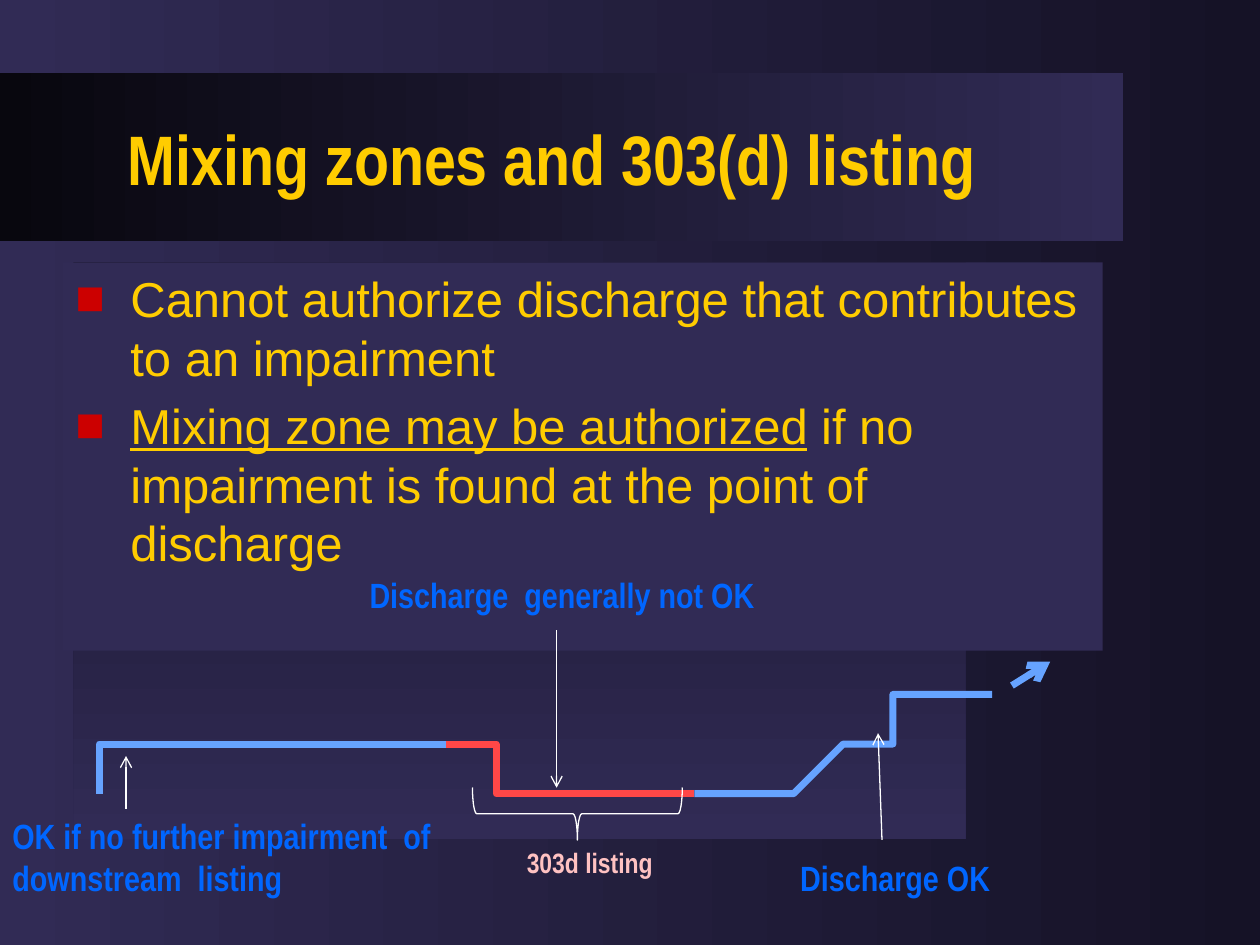
from dataclasses import dataclass

from lxml import etree
from pptx import Presentation
from pptx.dml.color import RGBColor
from pptx.enum.shapes import MSO_CONNECTOR as Conn, MSO_SHAPE as Shape
from pptx.enum.text import MSO_ANCHOR as Anchor
from pptx.oxml.ns import qn
from pptx.util import Cm, Pt

NAVY, DARK, BLACK = "312B55", "151226", "08070E"
GOLD, BLUE, PINK, WHITE = "FFCC00", "0066FF", "FFC2C2", "FFFFFF"
WATER, IMPAIRED, BULLET = "66A3FF", "FF4747", "CC0000"
NARROW = "Arial Narrow"


# All lengths below are in centimetres, line widths and text sizes in points.
@dataclass
class Reach:
    color: str
    points: list[tuple[float, float]]


@dataclass
class Arrow:
    start: tuple[float, float]
    end: tuple[float, float]
    color: str = WHITE
    width: float = 0.75


@dataclass
class Label:
    text: str
    box: tuple[float, float, float, float]
    size: float = 20
    color: str = BLUE
    wrap: bool = False


REACHES = [
    Reach(WATER, [
        (1.57, 15.62), (1.98, 15.44), (2.03, 15.39), (2.13, 15.37), (2.41, 15.21),
        (2.59, 15.19), (2.9, 15.09), (3.05, 15.04), (3.38, 14.96), (3.56, 14.86),
        (3.76, 14.81), (4.11, 14.71), (4.22, 14.66), (4.37, 14.63), (4.78, 14.66),
        (5.66, 14.76), (5.99, 14.81), (6.17, 14.81), (6.48, 14.86), (6.81, 14.88),
        (8.03, 14.91), (8.13, 14.99), (8.31, 15.01), (8.59, 15.01), (9.04, 15.06),
        (9.25, 15.11), (9.45, 15.19)]),
    Reach(IMPAIRED, [
        (9.45, 15.29), (9.68, 15.24), (9.86, 15.29), (9.98, 15.39), (10.16, 15.65),
        (10.52, 15.75), (10.62, 15.77), (11.33, 15.85), (12.14, 15.93), (12.32, 15.95),
        (12.45, 16.03), (12.7, 16.07), (12.98, 16.03), (13.34, 15.93), (13.44, 15.85),
        (13.74, 15.8), (14.12, 15.8)]),
    Reach(WATER, [
        (14, 15.85), (16.05, 15.8), (16.15, 15.77), (16.33, 15.62), (16.59, 15.44),
        (16.71, 15.39), (16.99, 15.14), (17.12, 15.09), (17.35, 14.96), (17.58, 14.88),
        (17.7, 14.78), (17.81, 14.76), (18.03, 14.61), (18.26, 14.46), (18.37, 14.46),
        (18.67, 14.5), (19.43, 14.45), (19.53, 14.4), (19.66, 14.35), (19.86, 14.17),
        (20.17, 14), (20.4, 13.82)]),
]

ARROWS = [
    Arrow((20.4, 13.82), (21.17, 13.34), WATER, 4),
    Arrow((17.78, 16.93), (17.7, 14.78)),
    Arrow((11.22, 12.7), (11.22, 15.88)),
    Arrow((2.54, 16.3), (2.54, 15.24)),
]

LABELS = [
    Label("Discharge OK", (15.88, 17.15, 4.52, 1.11)),
    Label("Discharge  generally not OK", (7.2, 11.43, 8.48, 1.11)),
    Label("OK if no further impairment  of downstream  listing",
          (0, 16.3, 10.16, 1.96), wrap=True),
    Label("303d listing", (10.37, 16.93, 3.08, 0.93), size=16, color=PINK),
]


def rgb(color: str) -> RGBColor:
    return RGBColor.from_string(color)


def set_gradient(fill, first: str, last: str, angle: float = 0) -> None:
    fill.gradient()
    fill.gradient_angle = angle
    for stop, color in zip(fill.gradient_stops, (first, last)):
        stop.color.rgb = rgb(color)


def set_line(shape, color: str, width: float) -> None:
    shape.line.color.rgb = rgb(color)
    shape.line.width = Pt(width)


def add_panel(s, *box: float):
    sp = s.shapes.add_shape(Shape.RECTANGLE, *map(Cm, box))
    sp.shadow.inherit = False
    sp.line.fill.background()
    return sp


def add_text_box(s, box, wrap: bool = True, anchor=Anchor.TOP):
    sp = s.shapes.add_textbox(*map(Cm, box))
    sp.text_frame.word_wrap = wrap
    sp.text_frame.vertical_anchor = anchor
    return sp


def add_run(p, text: str, *, size: float, color: str, font: str = NARROW,
            bold: bool = True, underline: bool = False) -> None:
    r = p.add_run()
    r.text = text
    f = r.font
    f.name, f.size, f.bold, f.underline = font, Pt(size), bold, underline
    f.color.rgb = rgb(color)


def set_bullet(p, char: str, color: str, indent: float) -> None:
    pPr = p._p.get_or_add_pPr()
    pPr.set("marL", str(Cm(indent)))
    pPr.set("indent", str(-Cm(indent)))
    clr = etree.SubElement(pPr, qn("a:buClr"))
    etree.SubElement(clr, qn("a:srgbClr"), val=color)
    etree.SubElement(pPr, qn("a:buFont"), typeface="Arial")
    etree.SubElement(pPr, qn("a:buChar"), char=char)


def add_reach(s, reach: Reach) -> None:
    (x, y), *rest = reach.points
    builder = s.shapes.build_freeform(x, y, scale=Cm(1))
    builder.add_line_segments(rest, close=False)
    sp = builder.convert_to_shape()
    sp.shadow.inherit = False
    sp.fill.background()
    set_line(sp, reach.color, 4)


def add_arrow(s, arrow: Arrow) -> None:
    cxn = s.shapes.add_connector(Conn.STRAIGHT, *map(Cm, arrow.start + arrow.end))
    set_line(cxn, arrow.color, arrow.width)
    etree.SubElement(cxn.line._get_or_add_ln(), qn("a:tailEnd"), type="arrow")
    etree.SubElement(cxn._element.spPr, qn("a:effectLst"))


def add_label(s, label: Label) -> None:
    tf = add_text_box(s, label.box, label.wrap).text_frame
    add_run(tf.paragraphs[0], label.text, size=label.size, color=label.color)


def main() -> None:
    prs = Presentation()
    prs.slide_width, prs.slide_height = Cm(25.4), Cm(19.05)
    s = prs.slides.add_slide(prs.slide_layouts[6])

    # Background and panels
    set_gradient(s.background.fill, NAVY, DARK)
    set_gradient(add_panel(s, 0, 1.48, 22.65, 3.38).fill, BLACK, NAVY)
    set_gradient(add_panel(s, 1.48, 5.28, 17.99, 11.64).fill, DARK, NAVY, 270)

    # Title
    title = add_text_box(s, (2.33, 1.48, 19.9, 3.38), anchor=Anchor.MIDDLE)
    p = title.text_frame.paragraphs[0]
    p.line_spacing = Pt(48)
    add_run(p, "Mixing zones and 303(d) listing", size=40, color=GOLD)

    # Bulleted rules: each is a list of (text, underlined) runs
    body = add_text_box(s, (1.27, 5.29, 20.96, 7.83))
    body.fill.solid()
    body.fill.fore_color.rgb = rgb(NAVY)
    rules = [
        [("Cannot authorize discharge that contributes to an impairment", False)],
        [("Mixing zone may be authorized", True),
         (" if no impairment is found at the point of discharge", False)],
    ]
    tf = body.text_frame
    for i, runs in enumerate(rules):
        p = tf.add_paragraph() if i else tf.paragraphs[0]
        p.line_spacing, p.space_before = Pt(33.5), Pt(5.6)
        set_bullet(p, "■", BULLET, 1.11)
        for text, underline in runs:
            add_run(p, text, size=28, color=GOLD, font="Arial", bold=False,
                    underline=underline)

    # River with its arrows and labels
    for reach in REACHES:
        add_reach(s, reach)
    for arrow in ARROWS:
        add_arrow(s, arrow)
    for label in LABELS:
        add_label(s, label)

    # Brace under the listed reach
    brace = s.shapes.add_shape(Shape.LEFT_BRACE, *map(Cm, (11.11, 14.29, 1.06, 4.23)))
    brace.rotation = 270
    brace.shadow.inherit = False
    brace.fill.background()
    set_line(brace, WHITE, 0.75)

    prs.save("out.pptx")


if __name__ == "__main__":
    main()
